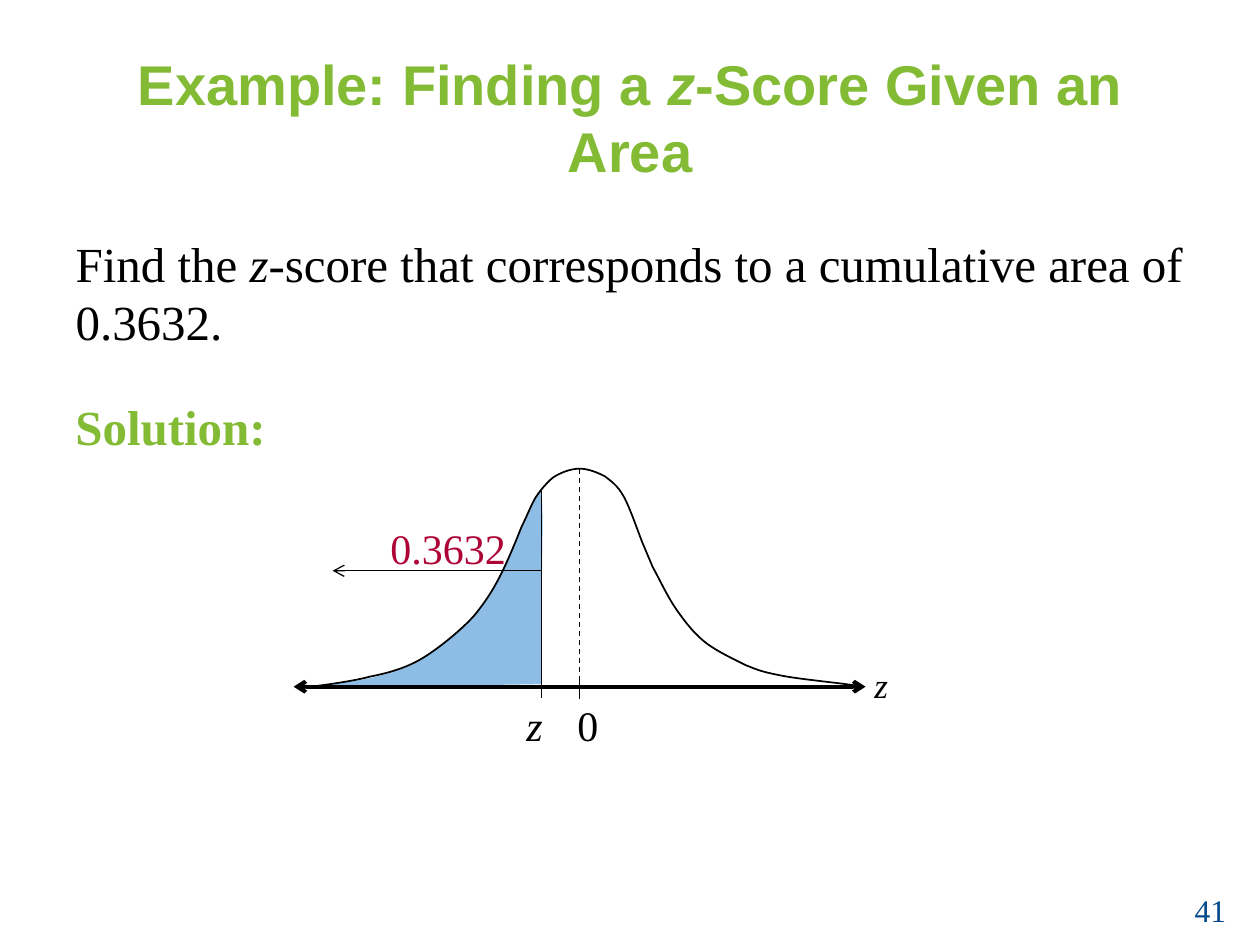
from dataclasses import dataclass

from lxml.etree import SubElement
from pptx import Presentation
from pptx.dml.color import RGBColor
from pptx.enum.dml import MSO_LINE_DASH_STYLE as Dash
from pptx.enum.shapes import MSO_CONNECTOR as Link
from pptx.enum.text import MSO_ANCHOR as Anchor, MSO_AUTO_SIZE as Fit, PP_ALIGN as Align
from pptx.oxml.ns import qn
from pptx.util import Cm, Pt

HUES = {"green": "83BB35", "black": "000000", "blue": "71ADDF",
        "red": "AE0337", "navy": "004988"}
SERIF = "Times New Roman"

# Plot positions, on a grid of inches
BASE, TOP, MEAN, CUT = 5.45, 3.72, 4.6, 4.3

# Each outline: start point, then Bezier control points in threes
AREA = [
    (2.49, 5.46),
    (2.57, 5.44), (2.81, 5.41), (2.95, 5.38),
    (3.10, 5.34), (3.23, 5.31), (3.35, 5.23),
    (3.48, 5.15), (3.66, 5.00), (3.76, 4.89),
    (3.87, 4.78), (3.90, 4.70), (3.96, 4.59),
    (3.99, 4.52), (4.08, 4.31), (4.14, 4.19),
    (4.21, 4.04), (4.18, 4.06), (4.29, 3.88),
    (4.32, 3.97), (CUT, 4.44), (CUT, 4.70),
    (CUT, 4.96), (CUT, 5.28), (CUT, 5.43),
]
BELL = [
    (2.47, 5.45),
    (2.55, 5.44), (2.79, 5.41), (2.94, 5.37),
    (3.09, 5.34), (3.23, 5.30), (3.36, 5.22),
    (3.49, 5.14), (3.66, 5.00), (3.76, 4.89),
    (3.86, 4.77), (3.92, 4.67), (3.98, 4.55),
    (4.04, 4.43), (4.10, 4.28), (4.14, 4.18),
    (4.19, 4.08), (4.21, 4.02), (4.25, 3.95),
    (4.29, 3.89), (4.34, 3.83), (4.39, 3.79),
    (4.45, 3.75), (4.53, 3.72), (MEAN, TOP),
    (4.67, 3.72), (4.74, 3.75), (4.80, 3.78),
    (4.85, 3.82), (4.90, 3.85), (4.95, 3.94),
    (5.00, 4.03), (5.06, 4.21), (5.10, 4.31),
    (5.14, 4.40), (5.14, 4.41), (5.18, 4.50),
    (5.23, 4.59), (5.30, 4.74), (5.37, 4.84),
    (5.44, 4.94), (5.51, 5.03), (5.60, 5.10),
    (5.69, 5.17), (5.82, 5.23), (5.92, 5.28),
    (6.02, 5.32), (6.04, 5.33), (6.19, 5.36),
    (6.33, 5.39), (6.66, 5.42), (6.78, 5.44),
]


@dataclass
class Style:
    size: int
    hue: str = "black"
    font: str = SERIF
    bold: bool = False
    slant: bool = False


@dataclass
class Label:
    text: str
    box: tuple
    style: Style
    wrap: bool = True
    align: Align = Align.LEFT


@dataclass
class Rule:
    start: tuple
    end: tuple
    width: float = 0.75
    dash: bool = False
    ends: tuple = ()


def cm(inch: float) -> Cm:
    return Cm(inch * 2.54)


def tint(hue: str) -> RGBColor:
    return RGBColor.from_string(HUES[hue])


def add_run(para, text: str, style: Style, slant: bool = False) -> None:
    run = para.add_run()
    run.text = text
    font = run.font
    font.name, font.size = style.font, Pt(style.size)
    font.bold, font.italic = style.bold, slant or style.slant
    font.color.rgb = tint(style.hue)


def fill_holder(shape, box: tuple, parts: list, style: Style):
    """Place a placeholder; every second part is italic."""
    shape.left, shape.top, shape.width, shape.height = map(cm, box)
    shape.text_frame.auto_size = Fit.NONE
    para = shape.text_frame.paragraphs[0]
    for i, part in enumerate(parts):
        add_run(para, part, style, i % 2 == 1)
    return para


def add_label(slide, label: Label) -> None:
    frame = slide.shapes.add_textbox(*map(cm, label.box)).text_frame
    frame.word_wrap = label.wrap
    para = frame.paragraphs[0]
    para.alignment = label.align
    add_run(para, label.text, label.style)


def add_rule(slide, rule: Rule) -> None:
    line = slide.shapes.add_connector(Link.STRAIGHT, *map(cm, rule.start + rule.end))
    line.line.width = Pt(rule.width)
    line.line.color.rgb = tint("black")
    if rule.dash:
        line.line.dash_style = Dash.DASH
    for end in rule.ends:
        SubElement(line.line._get_or_add_ln(), qn(f"a:{end}"), type="arrow")
    SubElement(line._element.spPr, qn("a:effectLst"))


def add_curve(slide, knots: list):
    """Draw a chain of cubic Bezier curves as a freeform."""
    spots = [(cm(x), cm(y)) for x, y in knots]
    pen = slide.shapes.build_freeform(*spots[0])
    pen.add_line_segments(spots[1:], close=False)
    shape = pen.convert_to_shape()
    shape.shadow.inherit = False
    # Join each three line points into one curve
    track = next(shape._element.iter(qn("a:path")))
    steps = track.findall(qn("a:lnTo"))
    for i in range(0, len(steps), 3):
        bend = SubElement(track, qn("a:cubicBezTo"))
        for step in steps[i:i + 3]:
            bend.append(step[0])
            track.remove(step)
    return shape


def main() -> None:
    deck = Presentation()
    deck.slide_width, deck.slide_height = cm(10), cm(7.5)
    slide = deck.slides.add_slide(deck.slide_layouts[1])
    title, body = slide.placeholders

    # Title and question
    para = fill_holder(title, (0.5, 0.3, 9, 1.25),
                       ["Example: Finding a ", "z", "-Score Given an Area"],
                       Style(32, "green", "Arial", bold=True))
    para.alignment = Align.CENTER
    title.text_frame.vertical_anchor = Anchor.MIDDLE
    para = fill_holder(body, (0.5, 1.8, 9, 0.95),
                       ["Find the ", "z",
                        "-score that corresponds to a cumulative area of 0.3632."],
                       Style(28))
    props = para._p.get_or_add_pPr()
    props.set("marL", "0")
    props.set("indent", "0")
    SubElement(props, qn("a:buNone"))

    # Shaded area left of z, then the bell outline
    area = add_curve(slide, AREA)
    area.fill.solid()
    area.fill.fore_color.rgb = tint("blue")
    color = area._element.spPr.find(qn("a:solidFill"))[0]
    SubElement(color, qn("a:alpha"), val="80000")
    area.line.fill.background()
    bell = add_curve(slide, BELL)
    bell.fill.background()
    bell.line.color.rgb = tint("black")
    bell.line.width = Pt(1)

    # Axis, ticks, cut line, mean line and area arrow
    for rule in (
        Rule((2.33, BASE), (6.87, BASE), 2.25, ends=("headEnd", "tailEnd")),
        Rule((CUT, 5.38), (CUT, 5.54)),
        Rule((MEAN, 5.39), (MEAN, 5.55)),
        Rule((MEAN, TOP), (MEAN, 5.43), dash=True),
        Rule((CUT, 5.48), (CUT, 3.9)),
        Rule((CUT, 4.53), (2.64, 4.53), ends=("tailEnd",)),
    ):
        add_rule(slide, rule)

    # Labels and page number
    for label in (
        Label("z", (4.08, 5.5, 0.33, 0.5), Style(24, slant=True), wrap=False),
        Label(" 0", (4.4, 5.5, 0.45, 0.5), Style(24), wrap=False),
        Label("z", (6.84, 5.22, 0.31, 0.44), Style(20, slant=True), wrap=False),
        Label("0.3632", (3, 4.1, 1.17, 0.51), Style(24, "red")),
        Label("Solution:", (0.5, 3.1, 4.25, 0.57), Style(28, "green", bold=True)),
        Label("41", (7.5, 7.02, 2.33, 0.4), Style(18, "navy"), align=Align.RIGHT),
    ):
        add_label(slide, label)

    deck.save("out.pptx")


if __name__ == "__main__":
    main()
